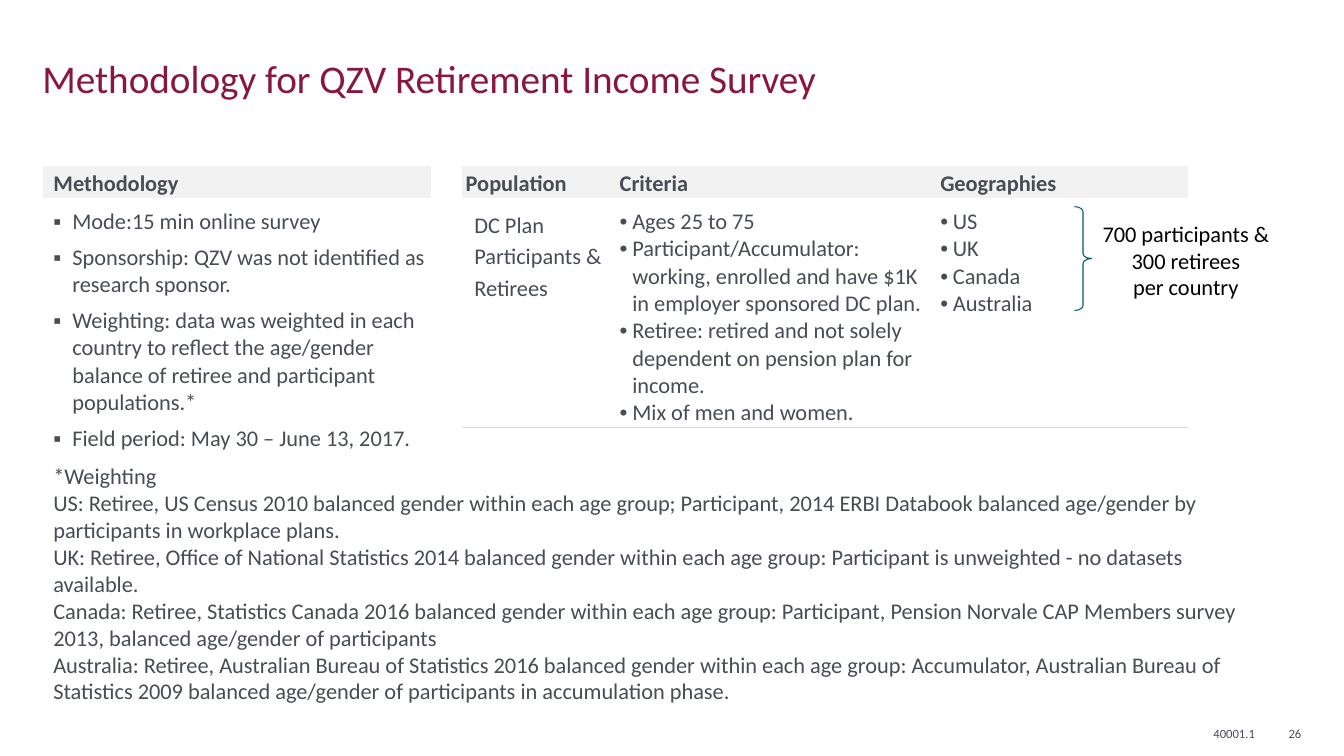
from dataclasses import dataclass

from lxml.etree import SubElement
from pptx import Presentation
from pptx.dml.color import RGBColor
from pptx.enum.shapes import MSO_SHAPE
from pptx.enum.text import MSO_ANCHOR as Anchor, MSO_AUTO_SIZE as AutoSize, PP_ALIGN as Align
from pptx.oxml.ns import qn
from pptx.util import Pt

FONT, GREY, WINE, TEAL, BLACK = "Calibri", "474C55", "89163E", "005776", "000000"
BAND, RULE = "F2F2F2", "D9D9D9"
PLAIN_TABLE = "{2D5ABB26-0587-4C30-8999-92F81FD0307C}"


@dataclass
class Style:
    size: float = 16
    color: str = GREY
    bold: bool = False
    align: Align = Align.LEFT
    spacing: float = 1.0
    before: float = 0
    bullet: str = ""
    indent: float = 0


@dataclass
class Column:
    heading: str
    width: float
    lines: list[str]
    style: Style
    left: float = 2.88
    head_left: float = 2.88


@dataclass
class Grid:
    left: float
    body_height: float
    columns: list[Column]
    ruled: bool = False


@dataclass
class Label:
    box: tuple[float, float, float, float]
    lines: list[str]
    style: Style
    anchor: Anchor = Anchor.MIDDLE
    inset: bool = True
    wrap: bool = True


def rgb(value: str) -> RGBColor:
    return RGBColor.from_string(value)


def write(tf, lines: list[str], style: Style) -> None:
    for i, line in enumerate(lines):
        p = tf.paragraphs[0] if i == 0 else tf.add_paragraph()
        p.alignment = style.align
        p.line_spacing = style.spacing
        p.space_before = Pt(style.before if i else 0)
        pPr = p._p.get_or_add_pPr()
        pPr.set("marL", str(Pt(style.indent)))
        pPr.set("indent", str(-Pt(style.indent) if style.bullet else 0))
        if style.bullet:
            SubElement(pPr, qn("a:buFont"), typeface="Arial")
            SubElement(pPr, qn("a:buChar"), char=style.bullet)
        r = p.add_run()
        r.text = line
        r.font.name, r.font.size, r.font.bold = FONT, Pt(style.size), style.bold
        r.font.color.rgb = rgb(style.color)


def set_margins(target, left: float, top: float, right: float, bottom: float) -> None:
    target.margin_left, target.margin_top = Pt(left), Pt(top)
    target.margin_right, target.margin_bottom = Pt(right), Pt(bottom)


def rule_below(cell) -> None:
    """Put a thin line under a cell, ahead of its fill as the schema asks."""
    tcPr = cell._tc.get_or_add_tcPr()
    ln = SubElement(tcPr, qn("a:lnB"), w=str(Pt(1)))
    SubElement(SubElement(ln, qn("a:solidFill")), qn("a:srgbClr"), val=RULE)


def add_grid(s, grid: Grid) -> None:
    head_height = 22
    width = sum(c.width for c in grid.columns)
    frame = s.shapes.add_table(2, len(grid.columns), Pt(grid.left), Pt(118.8),
                               Pt(width), Pt(head_height + grid.body_height))
    table = frame.table
    table.horz_banding = False
    table._tbl.tblPr.find(qn("a:tableStyleId")).text = PLAIN_TABLE
    table.rows[0].height, table.rows[1].height = Pt(head_height), Pt(grid.body_height)
    for i, column in enumerate(grid.columns):
        table.columns[i].width = Pt(column.width)
        head, body = table.cell(0, i), table.cell(1, i)
        set_margins(head, column.head_left, 0, 2.88, 0)
        head.vertical_anchor = Anchor.MIDDLE
        head.fill.solid()
        head.fill.fore_color.rgb = rgb(BAND)
        write(head.text_frame, [column.heading], Style(bold=True, spacing=1.15))
        set_margins(body, column.left, 7.2, 2.88, 0)
        if grid.ruled:
            rule_below(body)
        body.fill.background()
        write(body.text_frame, column.lines, column.style)


def add_label(s, label: Label) -> None:
    tf = s.shapes.add_textbox(*map(Pt, label.box)).text_frame
    tf.word_wrap = label.wrap
    tf.vertical_anchor = label.anchor
    if not label.inset:
        set_margins(tf, 0, 0, 0, 0)
    write(tf, label.lines, label.style)


def add_title(s, text: str) -> None:
    title = s.shapes.title
    title.left, title.top, title.width, title.height = map(Pt, (27.4, 0, 795.6, 72.7))
    tf = title.text_frame
    tf.auto_size, tf.word_wrap, tf.vertical_anchor = AutoSize.NONE, True, Anchor.BOTTOM
    set_margins(tf, 2.88, 0, 2.88, 0)
    write(tf, [text], Style(28, WINE, spacing=0.9))


def add_brace(s) -> None:
    brace = s.shapes.add_shape(MSO_SHAPE.RIGHT_BRACE, *map(Pt, (767.5, 147.6, 12.2, 74.2)))
    brace.adjustments[0], brace.adjustments[1] = 0.29, 0.5
    brace.shadow.inherit = False
    brace.fill.background()
    brace.line.color.rgb = rgb(TEAL)
    brace.line.width = Pt(0.75)


DOTS = Style(bullet="•", indent=9)
SQUARES = Style(bullet="▪", indent=13.5, before=6)
FOOTER = Style(9, align=Align.RIGHT)

GRIDS = [
    Grid(329.8, 164, [
        Column("Population", 110, ["DC Plan Participants & Retirees"],
               Style(spacing=1.15, indent=9), left=0),
        Column("Criteria", 229, [
            "Ages 25 to 75",
            "Participant/Accumulator: working, enrolled and have $1K in employer sponsored DC plan.",
            "Retiree: retired and not solely dependent on pension plan for income.",
            "Mix of men and women.",
        ], DOTS),
        Column("Geographies", 180, ["US", "UK", "Canada", "Australia"], DOTS),
    ], ruled=True),
    Grid(31, 201, [
        Column("Methodology", 277, [
            "Mode:15 min online survey",
            "Sponsorship: QZV was not identified as research sponsor.",
            "Weighting: data was weighted in each country to reflect the age/gender balance "
            "of retiree and participant populations.*",
            "Field period: May 30 – June 13, 2017.",
        ], SQUARES, left=7.2, head_left=7.2),
    ]),
]

LABELS = [
    Label((778.3, 149.8, 137.5, 72), ["700 participants &", "300 retirees", "per country"],
          Style(color=BLACK, align=Align.CENTER), wrap=False),
    Label((31, 326.9, 868.3, 167), [
        "*Weighting",
        "US: Retiree, US Census 2010 balanced gender within each age group; Participant, "
        "2014 ERBI Databook balanced age/gender by participants in workplace plans.",
        "UK: Retiree, Office of National Statistics 2014 balanced gender within each age group: "
        "Participant is unweighted - no datasets available.",
        "Canada: Retiree, Statistics Canada 2016 balanced gender within each age group: "
        "Participant, Pension Norvale CAP Members survey 2013, balanced age/gender of participants",
        "Australia: Retiree, Australian Bureau of Statistics 2016 balanced gender within each "
        "age group: Accumulator, Australian Bureau of Statistics 2009 balanced age/gender of "
        "participants in accumulation phase.",
    ], Style(), Anchor.TOP),
    Label((830.9, 519.1, 65.5, 10), ["40001.1"], FOOTER, inset=False),
    Label((900, 519.1, 29.5, 10), ["26"], FOOTER, inset=False),
]


def main() -> None:
    prs = Presentation()
    prs.slide_width, prs.slide_height = Pt(960), Pt(540)
    s = prs.slides.add_slide(prs.slide_layouts[5])
    add_title(s, "Methodology for QZV Retirement Income Survey")
    for grid in GRIDS:
        add_grid(s, grid)
    add_brace(s)
    for label in LABELS:
        add_label(s, label)
    prs.save("out.pptx")


if __name__ == "__main__":
    main()
